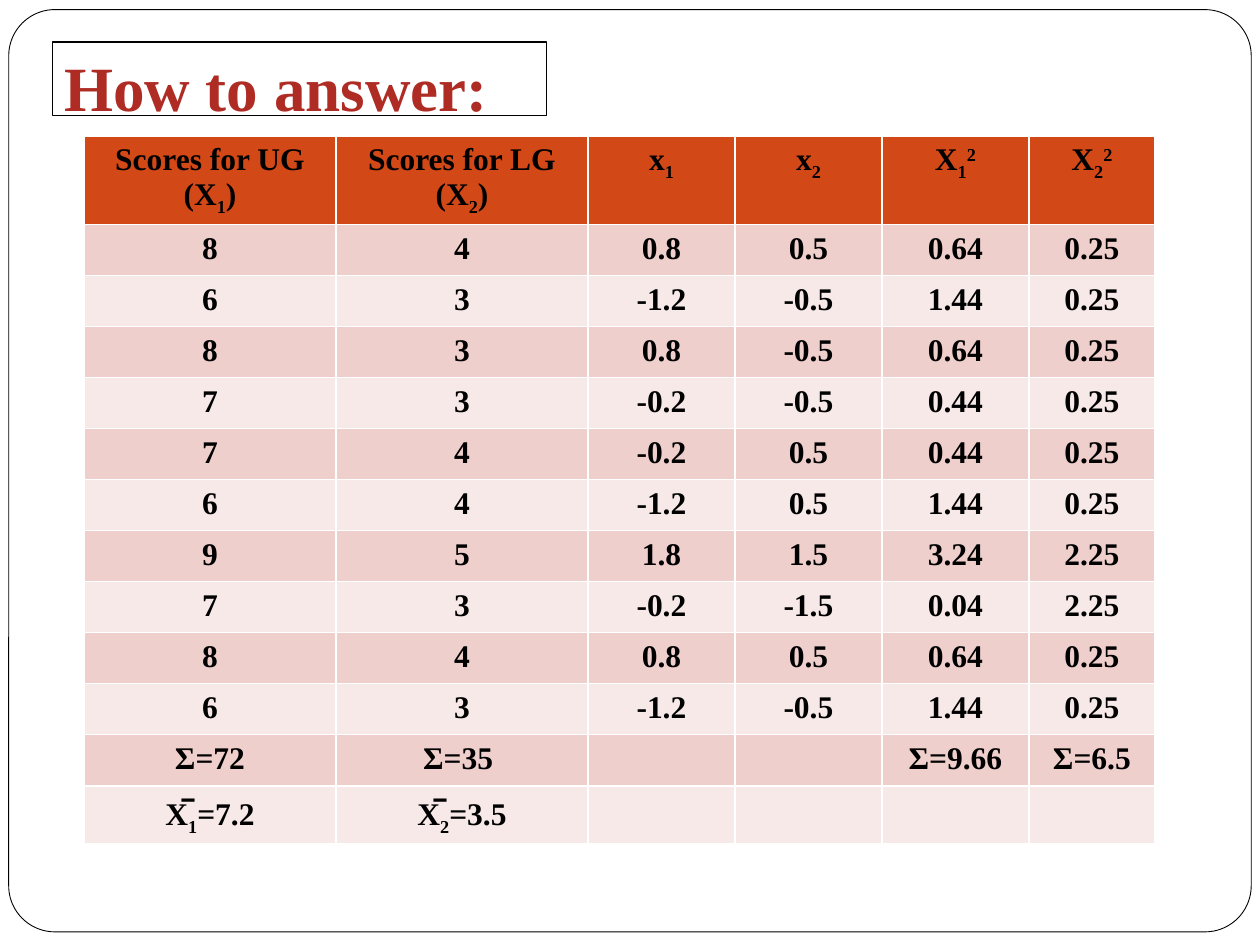
import pptx
import pptx.dml.color
import pptx.enum.shapes
import pptx.enum.text
import pptx.oxml
import pptx.oxml.ns
import pptx.util

Pt = pptx.util.Pt
Shapes = pptx.enum.shapes.MSO_SHAPE
Align = pptx.enum.text.PP_ALIGN
Anchor = pptx.enum.text.MSO_ANCHOR

SUB, SUPER = -25, 30
HEADERS = [
    ("Scores for UG (X", ("1", SUB), ")"),
    ("Scores for LG (X", ("2", SUB), ")"),
    ("x", ("1", SUB)),
    ("x", ("2", SUB)),
    ("X", ("1", SUB), ("2", SUPER)),
    ("X", ("2", SUB), ("2", SUPER)),
]
SCORES = [
    ["8", "4", "0.8", "0.5", "0.64", "0.25"],
    ["6", "3", "-1.2", "-0.5", "1.44", "0.25"],
    ["8", "3", "0.8", "-0.5", "0.64", "0.25"],
    ["7", "3", "-0.2", "-0.5", "0.44", "0.25"],
    ["7", "4", "-0.2", "0.5", "0.44", "0.25"],
    ["6", "4", "-1.2", "0.5", "1.44", "0.25"],
    ["9", "5", "1.8", "1.5", "3.24", "2.25"],
    ["7", "3", "-0.2", "-1.5", "0.04", "2.25"],
    ["8", "4", "0.8", "0.5", "0.64", "0.25"],
    ["6", "3", "-1.2", "-0.5", "1.44", "0.25"],
]
SUMS = ["Σ=72", "Σ=35 ", "", "", "Σ=9.66", "Σ=6.5"]
MEANS = [
    ("X", "̅", ("1", SUB), "=7.2"),
    ("X", "̅", ("2", SUB), "=3.5"),
    "", "", "", "",
]
COLUMN_WIDTHS = [144, 144, 84, 84, 84, 72]
HEADER_HEIGHT, ROW_HEIGHT = 50.4, 29.15


def color(value):
    return pptx.dml.color.RGBColor.from_string(value)


def add_text(para, text, size=18, fill="000000", font="Times New Roman", baseline=0):
    span = para.add_run()
    span.text = text
    span.font.name = font
    span.font.size = Pt(size)
    span.font.bold = True
    span.font.color.rgb = color(fill)
    if baseline:
        span.font._element.set("baseline", str(baseline * 1000))


def set_borders(cell):
    properties = cell._tc.get_or_add_tcPr()
    for position, side in enumerate(["lnL", "lnR", "lnT", "lnB"]):
        line = pptx.oxml.parse_xml(
            f'<a:{side} {pptx.oxml.ns.nsdecls("a")} w="{Pt(1)}"><a:solidFill>'
            f'<a:srgbClr val="FFFFFF"/></a:solidFill></a:{side}>'
        )
        properties.insert(position, line)


class SlideBuilder:
    header_fill = "D34817"
    band_fills = ["EFCFCC", "F7E9E8"]
    title_color = "AF2C25"
    mark_font = "Noto Sans Mono"

    def __init__(self, slide):
        self.slide = slide

    def add_box(self, kind, left, top, width, height, line_width, fill=None):
        box = self.slide.shapes.add_shape(kind, Pt(left), Pt(top), Pt(width), Pt(height))
        box.shadow.inherit = False
        if fill:
            box.fill.solid()
            box.fill.fore_color.rgb = color(fill)
        else:
            box.fill.background()
        box.line.color.rgb = color("000000")
        box.line.width = Pt(line_width)
        return box

    def add_frame(self):
        frame = self.add_box(Shapes.ROUNDED_RECTANGLE, 5, 5.5, 710, 527, 0.5, "FFFFFF")
        frame.adjustments[0] = 0.05

    def add_title(self, text):
        box = self.add_box(Shapes.RECTANGLE, 30.2, 24, 282, 42, 0.75)
        body = box.text_frame
        body.word_wrap = True
        body.vertical_anchor = Anchor.TOP
        body.margin_left, body.margin_top, body.margin_bottom = Pt(6.5), Pt(4), 0
        para = body.paragraphs[0]
        para.alignment = Align.LEFT
        add_text(para, text, size=36, fill=self.title_color)

    def fill_cell(self, cell, content, fill):
        cell.fill.solid()
        cell.fill.fore_color.rgb = color(fill)
        set_borders(cell)
        para = cell.text_frame.paragraphs[0]
        para.alignment = Align.CENTER
        if not content:
            return
        for part in [content] if isinstance(content, str) else content:
            if part == "̅":
                add_text(para, part, font=self.mark_font)
            elif isinstance(part, str):
                add_text(para, part)
            else:
                add_text(para, part[0], baseline=part[1])

    def add_table(self, rows, left, top):
        height = HEADER_HEIGHT + ROW_HEIGHT * (len(rows) - 1)
        table = self.slide.shapes.add_table(
            len(rows), len(COLUMN_WIDTHS), Pt(left), Pt(top),
            Pt(sum(COLUMN_WIDTHS)), Pt(height),
        ).table
        for column, width in zip(table.columns, COLUMN_WIDTHS):
            column.width = Pt(width)
        for index, contents in enumerate(rows):
            is_header = index == 0
            table.rows[index].height = Pt(HEADER_HEIGHT if is_header else ROW_HEIGHT)
            fill = self.header_fill if is_header else self.band_fills[(index - 1) % 2]
            for cell, content in zip(table.rows[index].cells, contents):
                self.fill_cell(cell, content, fill)


def main():
    deck = pptx.Presentation()
    deck.slide_width, deck.slide_height = Pt(720), Pt(540)
    builder = SlideBuilder(deck.slides.add_slide(deck.slide_layouts[6]))
    builder.add_frame()
    builder.add_table([HEADERS, *SCORES, SUMS, MEANS], left=48, top=78)
    builder.add_title("How to answer:")
    deck.save("out.pptx")


if __name__ == "__main__":
    main()
